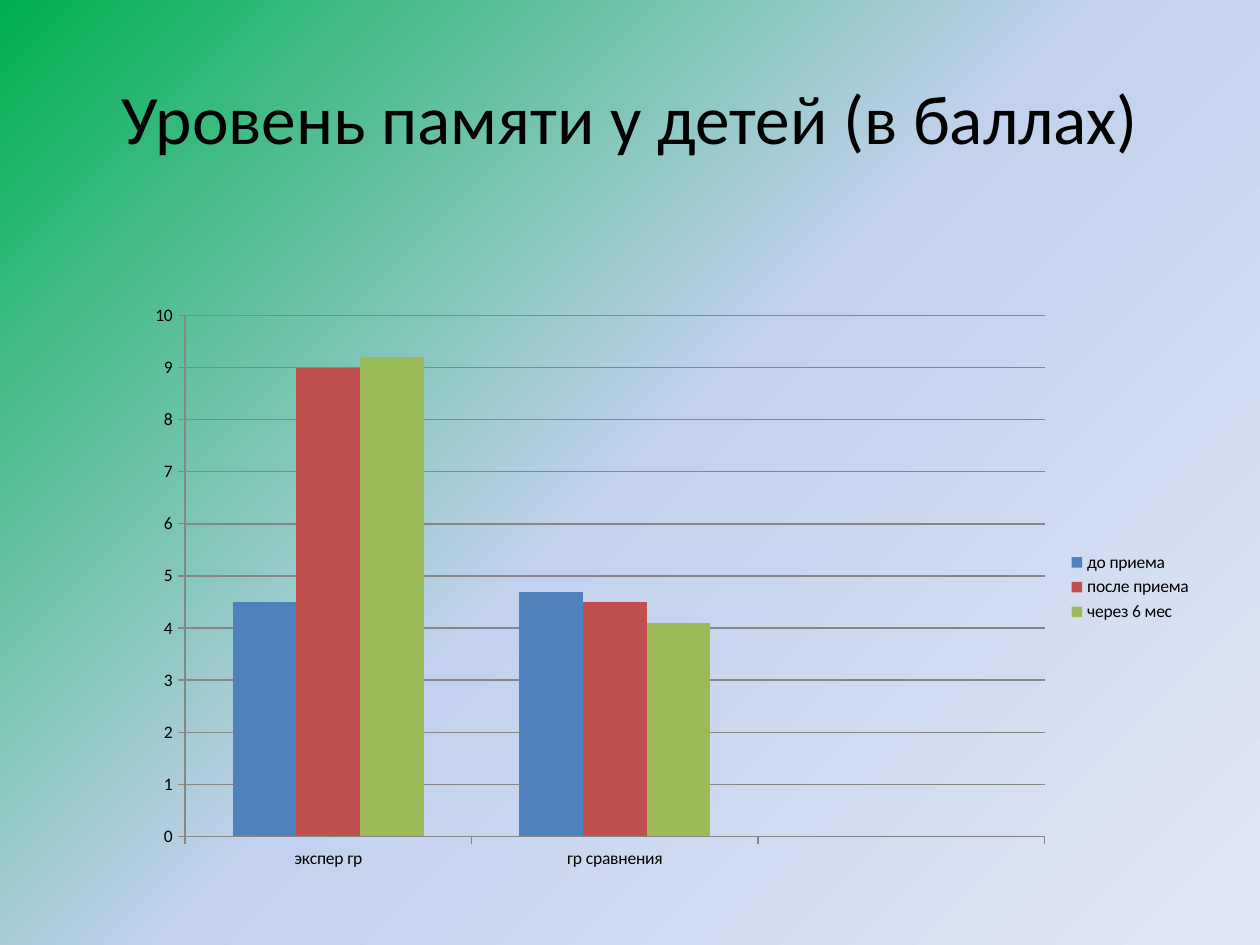
import copy

import pptx
import pptx.chart.data
import pptx.dml.color
import pptx.enum.chart
import pptx.enum.text
import pptx.oxml.ns
import pptx.util

Pt = pptx.util.Pt
FONT = "Calibri"
AXIS_GREY = "868686"
BACKGROUND = [(0, "00B050"), (0.5, "C2D1ED"), (1, "E1E8F5")]
CATEGORIES = ["экспер гр", "гр сравнения", ""]
SERIES = [
    ("до приема", [4.5, 4.7, None], "4F81BD"),
    ("после приема", [9, 4.5, None], "C0504D"),
    ("через 6 мес", [9.2, 4.1, None], "9BBB59"),
]


def rgb(value):
    return pptx.dml.color.RGBColor.from_string(value)


def style_font(font, size):
    font.name, font.size = FONT, Pt(size)
    font.color.rgb = rgb("000000")


def set_background(s, stops):
    fill = s.background.fill
    fill.gradient()
    fill.gradient_angle = 315  # counter-clockwise: runs to the lower right
    gs_list = s.element.find(".//" + pptx.oxml.ns.qn("a:gsLst"))
    while len(gs_list) < len(stops):
        gs_list.append(copy.deepcopy(gs_list[-1]))
    for stop, (position, color) in zip(fill.gradient_stops, stops):
        stop.position = position
        stop.color.rgb = rgb(color)


def add_title(s, text, left, top, width, height):
    sp = s.shapes.title
    sp.left, sp.top, sp.width, sp.height = map(Pt, (left, top, width, height))
    tf = sp.text_frame
    tf.text = text
    tf.word_wrap = True
    tf.vertical_anchor = pptx.enum.text.MSO_ANCHOR.MIDDLE
    p = tf.paragraphs[0]
    p.alignment = pptx.enum.text.PP_ALIGN.CENTER
    style_font(p.runs[0].font, 39.6)


def add_memory_chart(s, left, top, width, height):
    data = pptx.chart.data.CategoryChartData()
    data.categories = CATEGORIES
    for name, values, _ in SERIES:
        data.add_series(name, values)
    chart = s.shapes.add_chart(
        pptx.enum.chart.XL_CHART_TYPE.COLUMN_CLUSTERED,
        *map(Pt, (left, top, width, height)), data).chart
    chart.has_title = False
    style_font(chart.font, 10)

    plot = chart.plots[0]
    plot.gap_width, plot.overlap = 150, 0
    plot.vary_by_categories = False
    for series, (_, _, color) in zip(plot.series, SERIES):
        series.format.fill.solid()
        series.format.fill.fore_color.rgb = rgb(color)

    value_axis = chart.value_axis
    value_axis.minimum_scale, value_axis.maximum_scale = 0, 10
    value_axis.major_unit = 1
    value_axis.has_major_gridlines = True
    for axis in (chart.category_axis, value_axis):
        axis.major_tick_mark = pptx.enum.chart.XL_TICK_MARK.OUTSIDE
    for part in (chart.category_axis, value_axis, value_axis.major_gridlines):
        part.format.line.color.rgb = rgb(AXIS_GREY)
        part.format.line.width = Pt(0.75)

    chart.has_legend = True
    chart.legend.position = pptx.enum.chart.XL_LEGEND_POSITION.RIGHT
    chart.legend.include_in_layout = False


def main():
    prs = pptx.Presentation()
    prs.slide_width, prs.slide_height = Pt(720), Pt(540)
    s = prs.slides.add_slide(prs.slide_layouts[5])
    set_background(s, BACKGROUND)
    add_memory_chart(s, 76.5, 168, 612, 335)
    add_title(s, "Уровень памяти у детей (в баллах)", 36, 21.6, 648, 90)
    prs.save("out.pptx")


if __name__ == "__main__":
    main()
